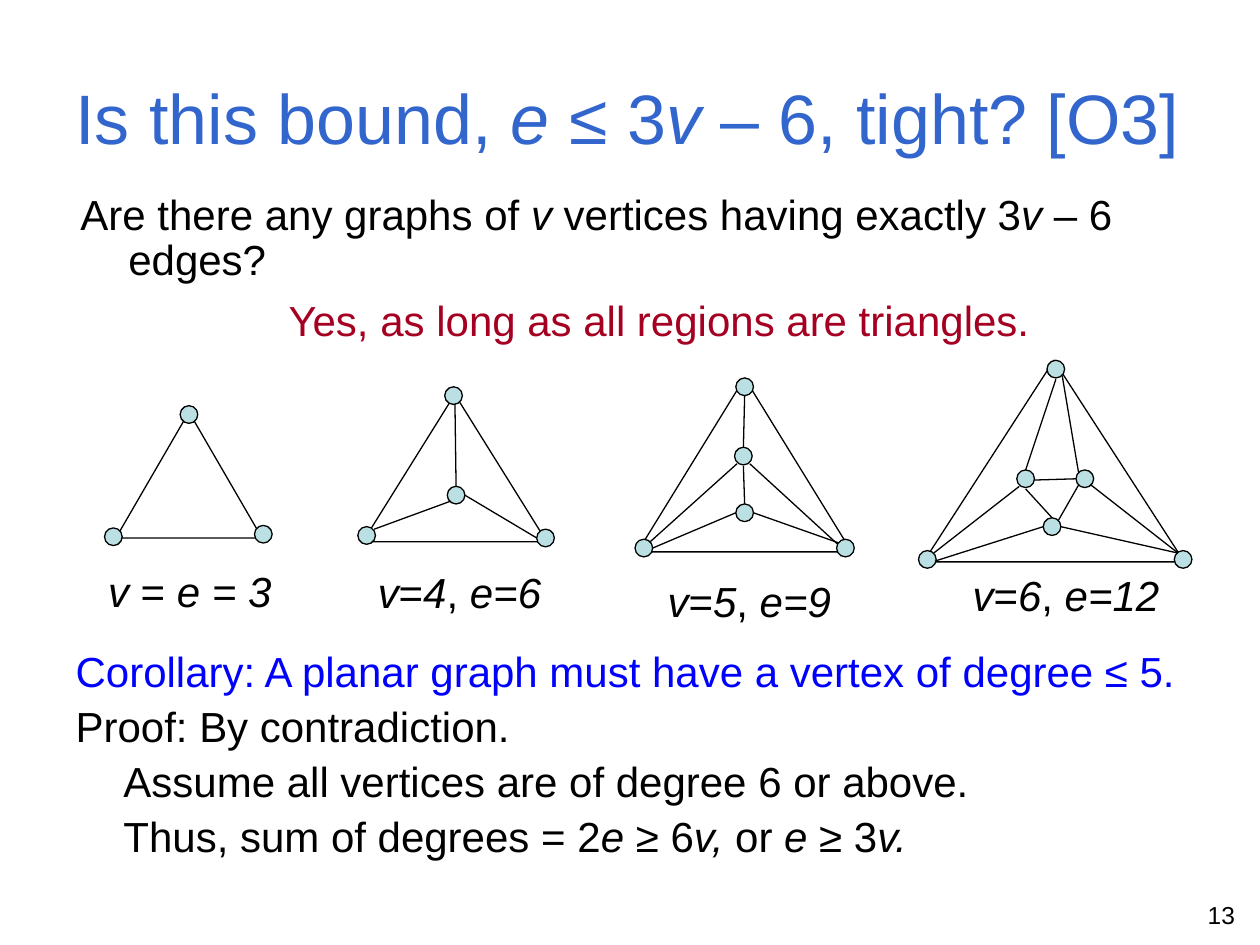
from lxml import etree
from pptx import Presentation
from pptx.dml.color import RGBColor
from pptx.enum.shapes import MSO_CONNECTOR, MSO_SHAPE
from pptx.enum.text import MSO_ANCHOR, MSO_AUTO_SIZE, PP_ALIGN
from pptx.oxml.ns import qn
from pptx.util import Inches, Pt

STRAIGHT = MSO_CONNECTOR.STRAIGHT
TRIANGLE, OVAL = MSO_SHAPE.ISOSCELES_TRIANGLE, MSO_SHAPE.OVAL
LEFT, CENTER, RIGHT = PP_ALIGN.LEFT, PP_ALIGN.CENTER, PP_ALIGN.RIGHT
TOP, MIDDLE = MSO_ANCHOR.TOP, MSO_ANCHOR.MIDDLE
NO_AUTOFIT = MSO_AUTO_SIZE.NONE

FONT = "Arial"
BLACK, TITLE_BLUE, BLUE, RED, NODE_FILL = "000000", "3366CC", "0000FF", "A50021", "BBE0E3"
NODE_SIZE = 0.14
LINE_WIDTH = 0.75
HANGING = 0.38

GRAPHS = [
    {
        "triangle": (0.92, 3.27, 1.16, 1),
        "nodes": [(2.02, 4.17), (1.43, 3.22), (0.83, 4.19)],
        "edges": [],
        "label": "*v* = *e = 3*",
        "label_box": (0.76, 4.44, 1.57, 0.5),
    },
    {
        "triangle": (2.88, 3.13, 1.46, 1.17),
        "nodes": [(4.26, 4.2), (2.84, 4.18), (3.55, 3.86), (3.53, 3.07)],
        "edges": [
            (3.61, 3.14, 3.62, 3.86),
            (2.97, 4.2, 3.57, 3.98),
            (3.69, 3.93, 4.26, 4.27),
        ],
        "label": "*v*=*4*, *e=6*",
        "label_box": (2.9, 4.45, 1.53, 0.5),
    },
    {
        "triangle": (5.06, 3, 1.7, 1.38),
        "nodes": [(6.64, 4.28), (5.04, 4.28), (5.83, 3.55), (5.84, 3), (5.84, 4)],
        "edges": [
            (5.91, 3.14, 5.9, 3.55),
            (5.16, 4.3, 5.85, 3.68),
            (5.95, 3.68, 6.66, 4.33),
            (5.9, 3.7, 5.91, 4),
            (5.18, 4.35, 5.84, 4.07),
            (5.98, 4.07, 6.66, 4.31),
        ],
        "label": "*v*=*5*, *e=9*",
        "label_box": (5.2, 4.52, 1.53, 0.5),
    },
    {
        "triangle": (7.33, 2.86, 2.07, 1.6),
        "nodes": [
            (9.32, 4.37), (7.29, 4.37), (8.07, 3.73),
            (8.31, 2.86), (8.28, 4.11), (8.54, 3.73),
        ],
        "edges": [
            (8.38, 3.01, 8.14, 3.73),
            (7.41, 4.39, 8.09, 3.86),
            (8.21, 3.81, 8.54, 3.8),
            (8.14, 3.88, 8.35, 4.11),
            (7.43, 4.45, 8.28, 4.18),
            (8.42, 4.18, 9.35, 4.39),
            (8.43, 2.98, 8.56, 3.75),
            (8.66, 3.85, 9.35, 4.39),
            (8.56, 3.85, 8.4, 4.13),
        ],
        "label": "*v*=*6*, *e=12*",
        "label_box": (7.62, 4.47, 1.75, 0.5),
    },
]


def rgb(color):
    """Turn a hex string into a colour."""
    return RGBColor.from_string(color)


def write(paragraph, text, size=24, color=BLACK, align=LEFT):
    """Fill a paragraph, with the parts between asterisks in italics."""
    paragraph.alignment = align
    font = paragraph.font
    font.name, font.size = FONT, Pt(size)
    font.color.rgb = rgb(color)
    for index, part in enumerate(text.split("*")):
        if part:
            run = paragraph.add_run()
            run.text = part
            if index % 2:
                run.font.italic = True


def set_list_style(paragraph, first_line):
    """Give a paragraph list spacing and a hanging indent without a bullet."""
    paragraph.line_spacing = 0.9
    paragraph.space_before = Pt(5.5)
    properties = paragraph._p.get_or_add_pPr()
    properties.set("marL", str(Inches(HANGING)))
    properties.set("indent", str(Inches(first_line)))
    bullet_free = etree.Element(qn("a:buNone"))
    properties.insert_element_before(bullet_free, "a:tabLst", "a:defRPr", "a:extLst")


def fill_placeholder(shape, box, anchor):
    """Move a placeholder and return its text frame."""
    shape.left, shape.top, shape.width, shape.height = map(Inches, box)
    frame = shape.text_frame
    frame.auto_size = NO_AUTOFIT
    frame.vertical_anchor = anchor
    return frame


def add_text(shapes, box, text, **style):
    """Add a wrapping text box and return its paragraph."""
    frame = shapes.add_textbox(*map(Inches, box)).text_frame
    frame.word_wrap = True
    paragraph = frame.paragraphs[0]
    write(paragraph, text, **style)
    return paragraph


def add_outlined(shapes, kind, box, fill=None):
    """Add a thinly outlined shape, hollow unless a fill is given."""
    shape = shapes.add_shape(kind, *map(Inches, box))
    shape.shadow.inherit = False
    shape.line.color.rgb = rgb(BLACK)
    shape.line.width = Pt(LINE_WIDTH)
    if fill:
        shape.fill.solid()
        shape.fill.fore_color.rgb = rgb(fill)
    else:
        shape.fill.background()


def add_edge(shapes, ends):
    """Add a straight graph edge."""
    edge = shapes.add_connector(STRAIGHT, *map(Inches, ends))
    edge.line.color.rgb = rgb(BLACK)
    edge.line.width = Pt(LINE_WIDTH)
    etree.SubElement(edge._element.spPr, qn("a:effectLst"))


def add_graph(slide, graph):
    """Add one triangulated graph with its label as a group."""
    shapes = slide.shapes.add_group_shape().shapes
    add_outlined(shapes, TRIANGLE, graph["triangle"])
    for ends in graph["edges"]:
        add_edge(shapes, ends)
    for left, top in graph["nodes"]:
        add_outlined(shapes, OVAL, (left, top, NODE_SIZE, NODE_SIZE), NODE_FILL)
    add_text(shapes, graph["label_box"], graph["label"])


def add_proof(shape):
    """Write the corollary and its proof into the body placeholder."""
    frame = fill_placeholder(shape, (0.5, 5.12, 9, 1.78), TOP)
    lines = [
        ("Corollary: A planar graph must have a vertex of degree ≤ 5.", BLUE, -HANGING),
        ("Proof: By contradiction.", BLACK, -HANGING),
        ("Assume all vertices are of degree 6 or above.", BLACK, 0),
        ("Thus, sum of degrees = 2*e *≥ 6*v,* or *e *≥ 3*v.*", BLACK, 0),
    ]
    for index, (text, color, first_line) in enumerate(lines):
        paragraph = frame.add_paragraph() if index else frame.paragraphs[0]
        write(paragraph, text, color=color)
        set_list_style(paragraph, first_line)


def main():
    """Build the slide and save it."""
    presentation = Presentation()
    presentation.slide_width, presentation.slide_height = Inches(10), Inches(7.5)
    slide = presentation.slides.add_slide(presentation.slide_layouts[1])
    title = fill_placeholder(slide.shapes.title, (0.5, 0.3, 9, 1.25), MIDDLE)
    write(title.paragraphs[0], "Is this bound, *e *≤ 3*v* – 6, tight? [O3]", 40, TITLE_BLUE)
    add_proof(slide.placeholders[1])
    question = add_text(
        slide.shapes,
        (0.54, 1.49, 9.01, 2.14),
        "Are there any graphs of *v* vertices having exactly 3*v* – 6 edges?",
    )
    set_list_style(question, -HANGING)
    for graph in GRAPHS:
        add_graph(slide, graph)
    answer = "Yes, as long as all regions are triangles."
    add_text(slide.shapes, (2.11, 2.29, 6.24, 0.5), answer, color=RED, align=CENTER)
    add_text(slide.shapes, (7.57, 7.09, 2.33, 0.31), "13", size=14, align=RIGHT)
    presentation.save("out.pptx")


if __name__ == "__main__":
    main()
